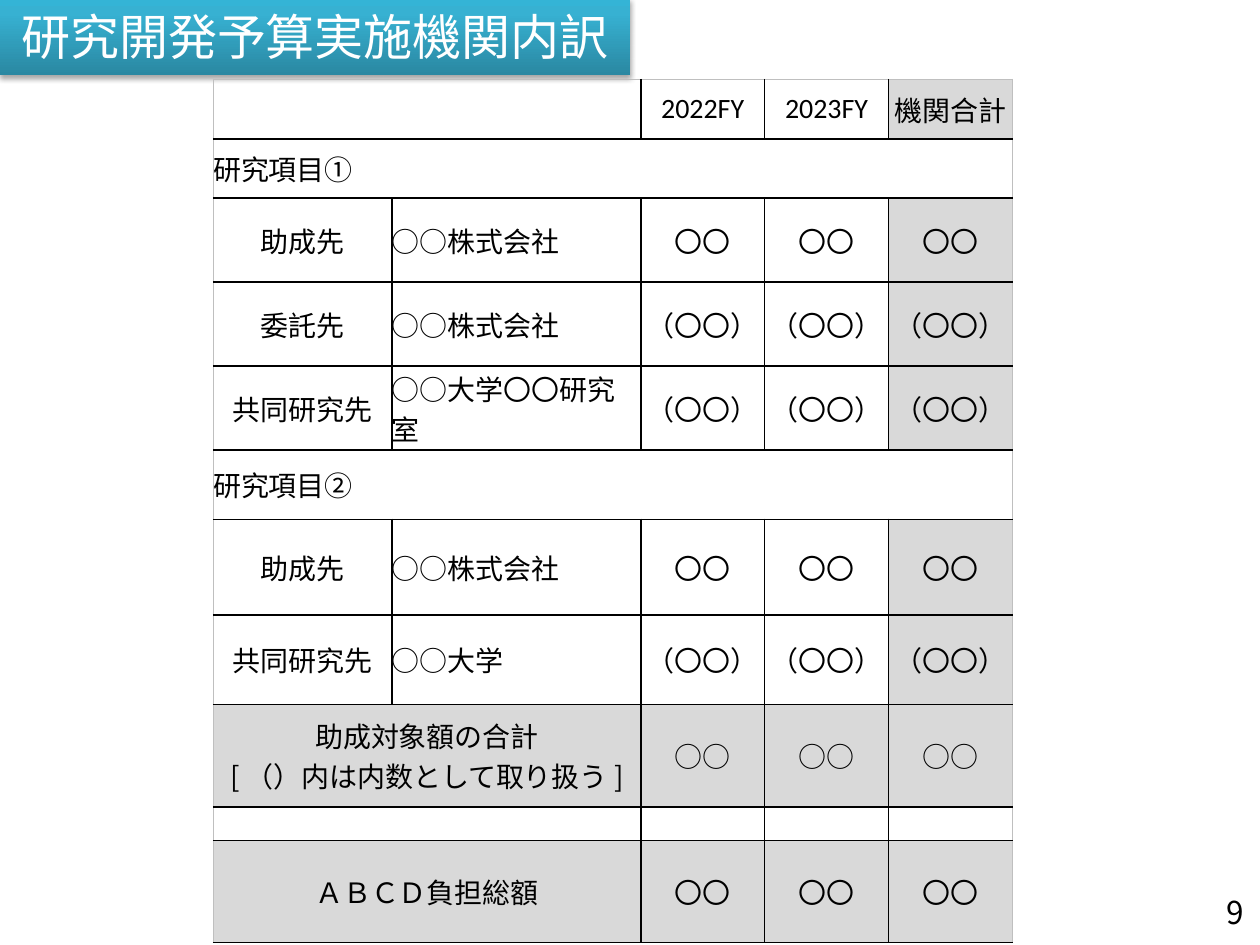
import pptx
import pptx.dml.color
import pptx.enum.shapes
import pptx.enum.text
import pptx.oxml
import pptx.oxml.ns
import pptx.util

Pt = pptx.util.Pt
RGBColor = pptx.dml.color.RGBColor
ALIGN = pptx.enum.text.PP_ALIGN
MIDDLE = pptx.enum.text.MSO_ANCHOR.MIDDLE

BLACK = RGBColor(0x00, 0x00, 0x00)
WHITE = RGBColor(0xFF, 0xFF, 0xFF)
TOTAL_GRAY = RGBColor(0xD9, 0xD9, 0xD9)
EDGE_GRAY = RGBColor(0xBF, 0xBF, 0xBF)
TEAL_DARK = RGBColor(0x2A, 0x88, 0xA2)
TEAL_MIDDLE = RGBColor(0x37, 0xB1, 0xD2)
TEAL_LIGHT = RGBColor(0x34, 0xB4, 0xD6)
LATIN_FONT = "Calibri"
JAPANESE_FONT = "Noto Sans CJK JP"

EDGE = (EDGE_GRAY, 0.5)
THIN = (BLACK, 1)
THICK = (BLACK, 1.5)

COLUMN_WIDTHS = [102.2, 142.2, 70.8, 70.8, 70.8]
ROW_HEIGHTS = [34, 34, 48, 48, 48, 39.5, 54.8, 51, 58.5, 15, 58.5]
PLAIN = ["〇〇"] * 3
BRACKETED = ["（〇〇）"] * 3
ROWS = [
    ["", None, "2022FY", "2023FY", "機関合計"],
    ["研究項目①", None, None, None, None],
    ["助成先", "○○株式会社", *PLAIN],
    ["委託先", "○○株式会社", *BRACKETED],
    ["共同研究先", "○○大学〇〇研究室", *BRACKETED],
    ["研究項目②", None, None, None, None],
    ["助成先", "○○株式会社", *PLAIN],
    ["共同研究先", "○○大学", *BRACKETED],
    ["助成対象額の合計\n[ （）内は内数として取り扱う ]", None, "○○", "○○", "○○"],
    ["", None, "", "", ""],
    ["ＡＢＣＤ負担総額", None, *PLAIN],
]
SECTION_ROWS = {1, 5}
TOTAL_ROWS = {8, 10}
SPACER_ROW = 9
THICK_BOUNDARIES = {1, 5, 9}


def parse_drawing(tag, content):
    namespace = pptx.oxml.ns.nsdecls("a")
    return pptx.oxml.parse_xml(f"<a:{tag} {namespace}>{content}</a:{tag}>")


def add_run(paragraph, text, size, color, font_name):
    run = paragraph.add_run()
    run.text = text
    run.font.size = Pt(size)
    run.font.color.rgb = color
    run.font.name = font_name
    east_asian = parse_drawing("ea", "")
    east_asian.set("typeface", JAPANESE_FONT)
    run.font._element.find(pptx.oxml.ns.qn("a:latin")).addnext(east_asian)


def add_title(slide, text):
    shape = slide.shapes.add_shape(
        pptx.enum.shapes.MSO_SHAPE.RECTANGLE, Pt(0), Pt(-1.2), Pt(360), Pt(44)
    )
    shape.line.fill.background()
    stops = "".join(
        f'<a:gs pos="{position * 1000}"><a:srgbClr val="{color}"/></a:gs>'
        for position, color in [(0, TEAL_DARK), (80, TEAL_MIDDLE), (100, TEAL_LIGHT)]
    )
    gradient = parse_drawing(
        "gradFill", f'<a:gsLst>{stops}</a:gsLst><a:lin ang="16200000" scaled="0"/>'
    )
    properties = shape._element.spPr
    properties.find(pptx.oxml.ns.qn("a:prstGeom")).addnext(gradient)
    properties.append(parse_drawing(
        "effectLst",
        f'<a:outerShdw blurRad="{Pt(3.1)}" dist="{Pt(1.8)}" dir="5400000" rotWithShape="0">'
        f'<a:srgbClr val="{BLACK}"><a:alpha val="35000"/></a:srgbClr></a:outerShdw>',
    ))
    frame = shape.text_frame
    frame.word_wrap = True
    frame.vertical_anchor = MIDDLE
    paragraph = frame.paragraphs[0]
    paragraph.alignment = ALIGN.CENTER
    add_run(paragraph, text, 28, WHITE, LATIN_FONT)


def add_page_number(slide, text):
    frame = slide.shapes.add_textbox(Pt(669), Pt(512), Pt(41.6), Pt(18)).text_frame
    frame.margin_left = frame.margin_right = frame.margin_top = frame.margin_bottom = 0
    frame.word_wrap = True
    frame.vertical_anchor = MIDDLE
    paragraph = frame.paragraphs[0]
    paragraph.alignment = ALIGN.RIGHT
    add_run(paragraph, text, 18, BLACK, JAPANESE_FONT)


def horizontal_border(boundary):
    if boundary == 0:
        return EDGE
    return THICK if boundary in THICK_BOUNDARIES else THIN


def vertical_border(row, boundary):
    if boundary in (0, len(COLUMN_WIDTHS)) or row in SECTION_ROWS:
        return EDGE
    return THICK if boundary == 1 and ROWS[row][1] is not None else THIN


def set_borders(cell, row, column):
    borders = {
        "lnL": vertical_border(row, column),
        "lnR": vertical_border(row, column + 1),
        "lnT": horizontal_border(row),
        "lnB": horizontal_border(row + 1),
    }
    properties = cell._tc.get_or_add_tcPr()
    for side, (color, width) in borders.items():
        line = parse_drawing(
            side, f'<a:solidFill><a:srgbClr val="{color}"/></a:solidFill>'
        )
        line.set("w", str(int(Pt(width))))
        properties.append(line)


def set_fill(cell, row, column):
    is_total_column = column == 4 and row not in SECTION_ROWS
    if row == SPACER_ROW:
        cell.fill.solid()
        cell.fill.fore_color.rgb = WHITE
    elif row in TOTAL_ROWS or is_total_column:
        cell.fill.solid()
        cell.fill.fore_color.rgb = TOTAL_GRAY
    else:
        cell.fill.background()


def fill_cell(cell, text, alignment):
    font_name = LATIN_FONT if text.endswith("FY") else JAPANESE_FONT
    for index, line in enumerate(text.split("\n")):
        frame = cell.text_frame
        paragraph = frame.add_paragraph() if index else frame.paragraphs[0]
        paragraph.alignment = alignment
        if line:
            add_run(paragraph, line, 16, BLACK, font_name)
        else:
            ending = parse_drawing("endParaRPr", f'<a:latin typeface="{font_name}"/>')
            ending.set("sz", "1600")
            paragraph._p.append(ending)


def add_budget_table(slide):
    table = slide.shapes.add_table(
        len(ROWS), len(COLUMN_WIDTHS), Pt(121.8), Pt(45.3),
        Pt(sum(COLUMN_WIDTHS)), Pt(sum(ROW_HEIGHTS))
    ).table
    table.first_row = False
    table.horz_banding = False
    for column, width in zip(table.columns, COLUMN_WIDTHS):
        column.width = Pt(width)
    for row, height in zip(table.rows, ROW_HEIGHTS):
        row.height = Pt(height)
    for row, texts in enumerate(ROWS):
        for column, text in enumerate(texts):
            cell = table.cell(row, column)
            cell.margin_left = cell.margin_right = cell.margin_top = cell.margin_bottom = 0
            cell.vertical_anchor = MIDDLE
            set_borders(cell, row, column)
            set_fill(cell, row, column)
            is_left = row in SECTION_ROWS or column == 1
            fill_cell(cell, text or "", ALIGN.LEFT if is_left else ALIGN.CENTER)
        span = texts.count(None)
        if span:
            table.cell(row, 0).merge(table.cell(row, span))


def main():
    presentation = pptx.Presentation()
    presentation.slide_width = Pt(720)
    presentation.slide_height = Pt(540)
    slide = presentation.slides.add_slide(presentation.slide_layouts[6])
    add_title(slide, "研究開発予算実施機関内訳")
    add_page_number(slide, "9")
    add_budget_table(slide)
    presentation.save("out.pptx")


if __name__ == "__main__":
    main()
